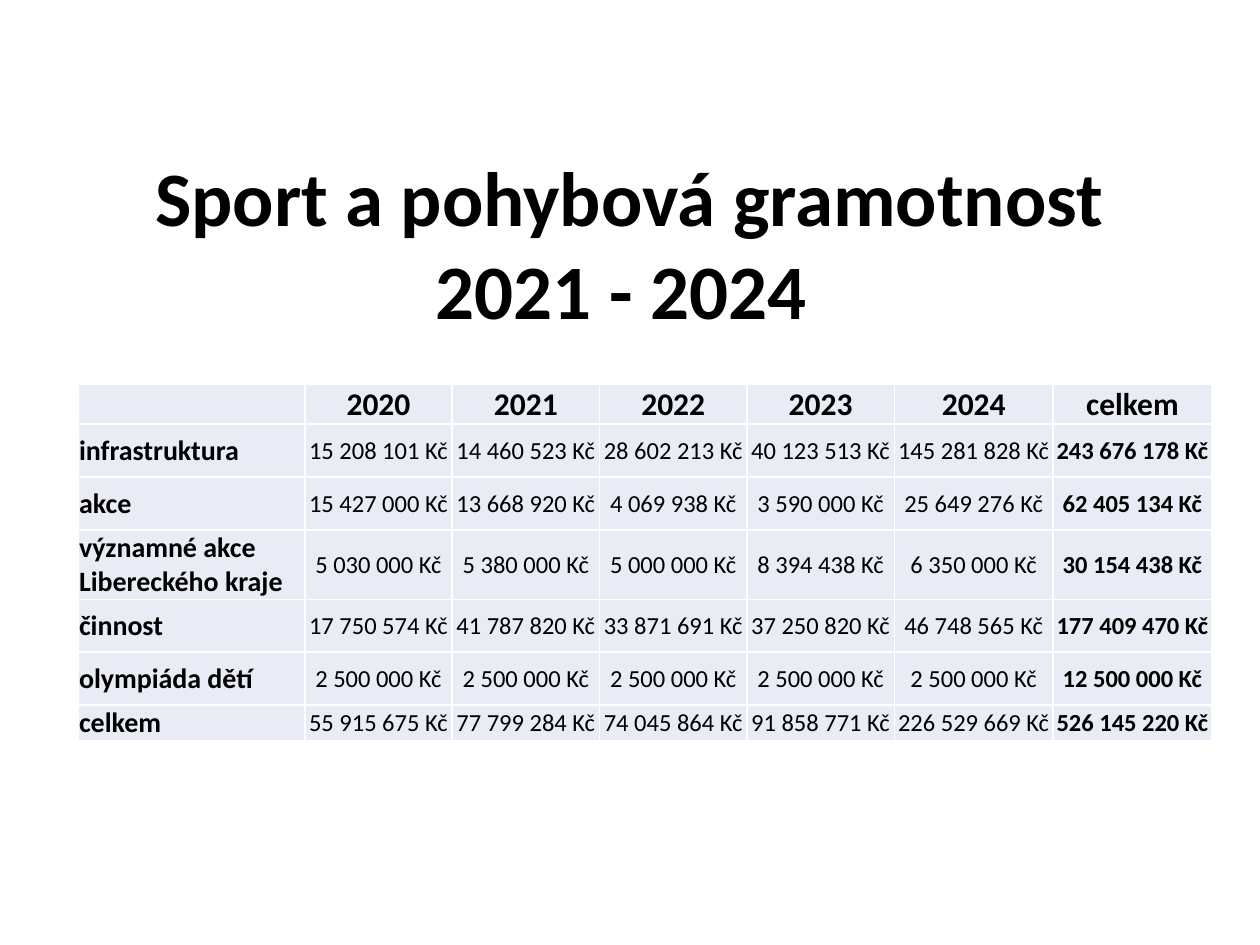
from lxml import etree
from pptx import Presentation
from pptx.dml.color import RGBColor
from pptx.enum import text
from pptx.oxml import ns
from pptx.util import Pt

TITLE = "Sport a pohybová gramotnost 2021 - 2024 "
ROWS = [
    ("", "2020", "2021", "2022", "2023", "2024", "celkem"),
    ("infrastruktura", "15 208 101 Kč", "14 460 523 Kč", "28 602 213 Kč",
     "40 123 513 Kč", "145 281 828 Kč", "243 676 178 Kč"),
    ("akce", "15 427 000 Kč", "13 668 920 Kč", "4 069 938 Kč",
     "3 590 000 Kč", "25 649 276 Kč", "62 405 134 Kč"),
    ("významné akce Libereckého kraje", "5 030 000 Kč", "5 380 000 Kč", "5 000 000 Kč",
     "8 394 438 Kč", "6 350 000 Kč", "30 154 438 Kč"),
    ("činnost", "17 750 574 Kč", "41 787 820 Kč", "33 871 691 Kč",
     "37 250 820 Kč", "46 748 565 Kč", "177 409 470 Kč"),
    ("olympiáda dětí", "2 500 000 Kč", "2 500 000 Kč", "2 500 000 Kč",
     "2 500 000 Kč", "2 500 000 Kč", "12 500 000 Kč"),
    ("celkem", "55 915 675 Kč", "77 799 284 Kč", "74 045 864 Kč",
     "91 858 771 Kč", "226 529 669 Kč", "526 145 220 Kč"),
]
WIDTHS = [129.6] + [84.24] * 4 + [90.72] * 2
HEIGHTS = [16] + [30.2] * 5 + [16.8]

FONT = "Calibri"
BLACK = RGBColor(0x00, 0x00, 0x00)
WHITE = RGBColor(0xFF, 0xFF, 0xFF)
PALE = RGBColor(0xE9, 0xEB, 0xF5)


def style(para, size, bold, align):
    para.alignment = align
    for run in para.runs:
        font = run.font
        font.name, font.size, font.bold = FONT, Pt(size), bold
        font.color.rgb = BLACK


def frame(cell, color):
    """Draw a 1 pt line on all four sides; call before the cell is filled."""
    props = cell._tc.get_or_add_tcPr()
    for side in ("lnL", "lnR", "lnT", "lnB"):
        line = etree.SubElement(props, ns.qn("a:" + side), w=str(Pt(1)))
        fill = etree.SubElement(line, ns.qn("a:solidFill"))
        etree.SubElement(fill, ns.qn("a:srgbClr"), val=str(color))


def add_title(slide):
    box = slide.shapes.add_textbox(Pt(77), Pt(82), Pt(566), Pt(114))
    body = box.text_frame
    body.word_wrap = True
    body.auto_size = text.MSO_AUTO_SIZE.SHAPE_TO_FIT_TEXT
    body.text = TITLE
    style(body.paragraphs[0], 44, True, text.PP_ALIGN.CENTER)


def add_costs(slide):
    table = slide.shapes.add_table(
        len(ROWS), len(WIDTHS), Pt(44.6), Pt(219.8),
        Pt(sum(WIDTHS)), Pt(sum(HEIGHTS))).table
    for col, width in zip(table.columns, WIDTHS):
        col.width = Pt(width)
    for row, height in zip(table.rows, HEIGHTS):
        row.height = Pt(height)

    last = len(WIDTHS) - 1
    for r, row in enumerate(ROWS):
        for c, value in enumerate(row):
            cell = table.cell(r, c)
            frame(cell, WHITE)
            cell.fill.solid()
            cell.fill.fore_color.rgb = PALE
            cell.margin_left = cell.margin_right = cell.margin_top = Pt(0.6)
            cell.margin_bottom = 0
            cell.vertical_anchor = text.MSO_ANCHOR.MIDDLE
            cell.text_frame.text = value
            size = 18 if r == 0 else 16 if c == 0 else 14
            bold = r == 0 or c in (0, last)
            align = text.PP_ALIGN.CENTER if c else text.PP_ALIGN.LEFT
            style(cell.text_frame.paragraphs[0], size, bold, align)


def main():
    deck = Presentation()
    deck.slide_width, deck.slide_height = Pt(720), Pt(540)
    slide = deck.slides.add_slide(deck.slide_layouts[6])
    add_costs(slide)
    add_title(slide)
    deck.save("out.pptx")


if __name__ == "__main__":
    main()
